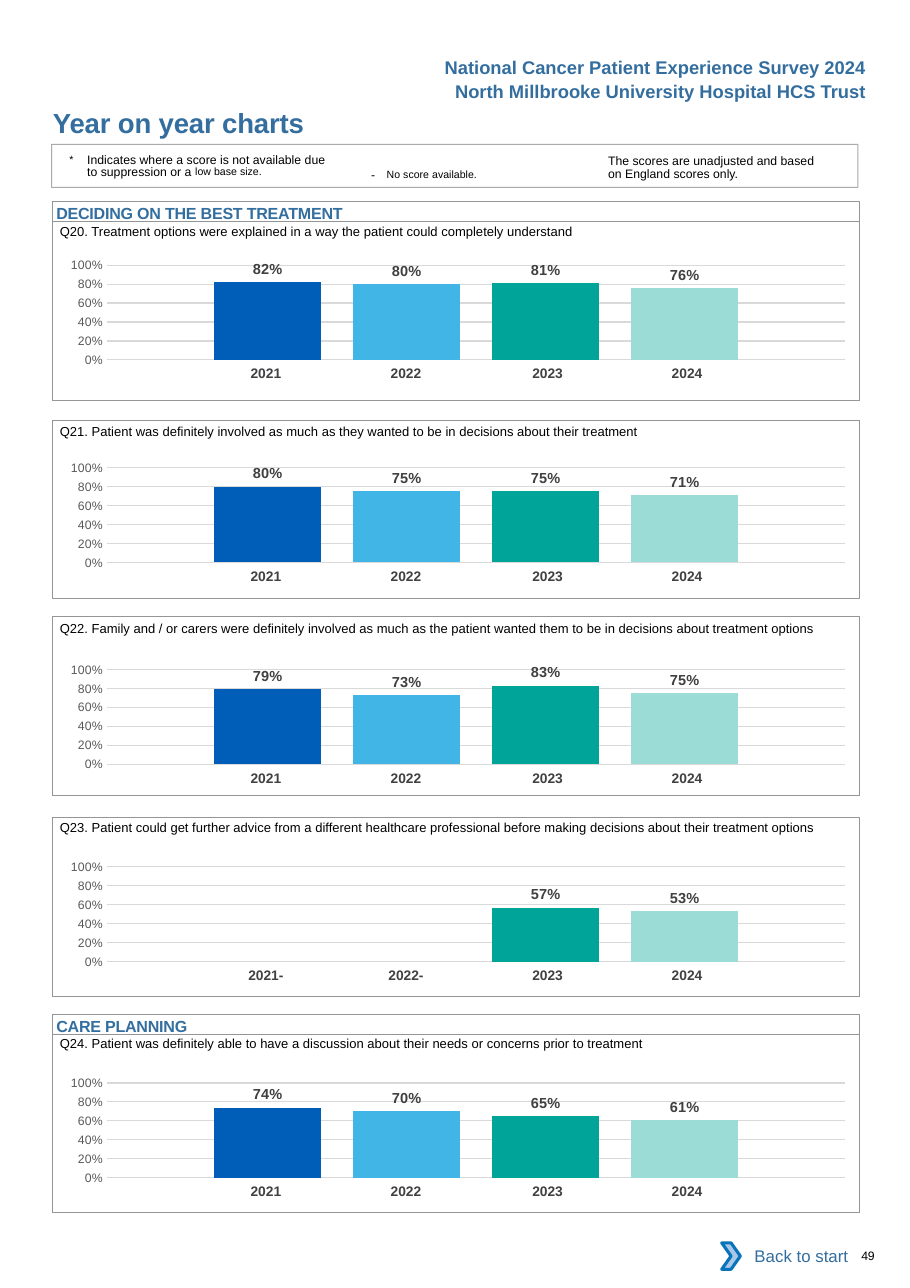
"""Build the year on year survey page with five question panels."""
import dataclasses

import pptx
import pptx.chart.data
import pptx.dml.color
import pptx.enum.chart
import pptx.enum.shapes
import pptx.enum.text
import pptx.oxml
import pptx.oxml.ns
import pptx.util

Cm, Pt = pptx.util.Cm, pptx.util.Pt
rgb = pptx.dml.color.RGBColor.from_string
qn = pptx.oxml.ns.qn
Align = pptx.enum.text.PP_ALIGN
Anchor = pptx.enum.text.MSO_ANCHOR
Shape = pptx.enum.shapes.MSO_SHAPE


@dataclasses.dataclass(frozen=True)
class Theme:
    font: str = "Arial"
    chart_font: str = "Calibri"
    ink: str = "000000"
    accent: str = "336E9F"
    frame: str = "939598"
    year: str = "414042"
    label: str = "404040"
    axis: str = "595959"
    grid: str = "D9D9D9"
    paper: str = "FFFFFF"
    arrow_fill: str = "A8C7E9"
    arrow_line: str = "0A74BB"
    bars: tuple = ("005EB8", "41B6E6", "00A499", "9CDCD7")
    title: float = 18
    header: float = 12
    back: float = 11
    section: float = 10.5
    value: float = 9.5
    years: float = 9
    question: float = 8.5
    small: float = 8
    raised: float = 12
    chart: float = 10


theme = Theme()


def write(frame, text, size=theme.small, color=theme.ink, bold=False, align=Align.LEFT,
          anchor=Anchor.TOP, insets=None, spacing=0, leading=None, hanging=0):
    """Fill a text frame with a string or a list of (text, run attributes)."""
    frame.word_wrap = True
    frame.vertical_anchor = anchor
    if insets:
        frame.margin_left, frame.margin_top, frame.margin_right, frame.margin_bottom = map(Cm, insets)
    paragraph = frame.paragraphs[0]
    paragraph.alignment = align
    if leading:
        paragraph.line_spacing = Pt(leading)
    if hanging:
        properties = paragraph._p.get_or_add_pPr()
        properties.set("marL", str(Cm(hanging)))
        properties.set("indent", str(-Cm(hanging)))
    for words, extra in [(text, {})] if isinstance(text, str) else text:
        if words == "\n":
            paragraph.add_line_break()
            continue
        run = paragraph.add_run()
        run.text = words
        run.font.name, run.font.bold = theme.font, bold
        run.font.size = Pt(extra.get("size", size))
        run.font.color.rgb = rgb(color)
        attributes = run._r.get_or_add_rPr()
        attributes.set("spc", str(round(100 * extra.get("spacing", spacing))))
        if "raise_by" in extra:
            attributes.set("baseline", str(1000 * extra["raise_by"]))


def draw(kind, left, top, width, height, fill=None, line=None, weight=0.5):
    """Add a preset shape with an optional fill and outline."""
    shape = slide.shapes.add_shape(kind, Cm(left), Cm(top), Cm(width), Cm(height))
    shape.shadow.inherit = False
    if fill:
        shape.fill.solid()
        shape.fill.fore_color.rgb = rgb(fill)
    else:
        shape.fill.background()
    if line:
        shape.line.color.rgb = rgb(line)
        shape.line.width = Pt(weight)
    else:
        shape.line.fill.background()
    return shape


deck = pptx.Presentation()
deck.slide_width, deck.slide_height = Cm(20.98), Cm(29.69)
slide = deck.slides.add_slide(deck.slide_layouts[6])

flush = (0, 0, 0, 0)
note_insets = (0, 0.08, 0, 0)
low_base = [
    ("*\t", {"size": theme.raised, "raise_by": 3}),
    ("Indicates where a score is not available due", {}),
    ("\n", {}),
    ("to suppression or a ", {}),
    ("low base size.", {"size": theme.raised, "raise_by": 7}),
]
no_score = [("- ", {"spacing": 2.6}), ("No score available.", {"size": theme.raised, "raise_by": 3})]
unadjusted = [("The scores are unadjusted and based", {}), ("\n", {}), ("on England scores only.", {})]
heading = dict(size=theme.header, color=theme.accent, bold=True, align=Align.RIGHT)
texts = [
    (19.61, 28.78, 1.3, 0.33, "49", dict(insets=(0.25, 0, 0, 0), spacing=-0.2)),
    (1.19, 2.44, 11.43, 0.76, "Year on year charts",
     dict(size=theme.title, color=theme.accent, bold=True, insets=(0.03, 0, 0, 0), spacing=-0.1)),
    (9.55, 1.17, 10.67, 0.76, "National Cancer Patient Experience Survey 2024", heading),
    (9.55, 1.73, 10.67, 0.76, "North Millbrooke University Hospital HCS Trust", heading),
    (1.6, 3.51, 6.91, 0.7, low_base, dict(insets=note_insets, leading=8.1, hanging=0.41)),
    (8.31, 3.58, 4.65, 0.61, no_score, {}),
    (14.02, 3.51, 5.11, 0.69, unadjusted, dict(insets=note_insets, leading=8.1)),
]
for left, top, width, height, words, style in texts:
    box = slide.shapes.add_textbox(Cm(left), Cm(top), Cm(width), Cm(height))
    write(box.text_frame, words, **style)

legend_frame = draw(Shape.RECTANGLE, 1.19, 3.33, 18.59, 0.99, line=theme.frame, weight=0.75)
line_color = legend_frame.line._ln.find(".//" + qn("a:srgbClr"))
line_color.append(pptx.oxml.parse_xml(
    f'<a:alpha {pptx.oxml.ns.nsdecls("a")} val="80000"/>'))

panel_left, panel_width, panel_height = 1.22, 18.59, 4.11
section_height = 0.46
year_widths = (3.23, 3.23, 3.4, 3.23)
year_right_margins = (0, 0, 0.1, 0.3)
panels = [
    (5.11, 5.64, 4.93, "DECIDING ON THE BEST TREATMENT",
     "Q20. Treatment options were explained in a way the patient could completely understand",
     (0.82, 0.8, 0.81, 0.76)),
    (9.68, 10.31, 9.53, None,
     "Q21. Patient was definitely involved as much as they wanted to be in decisions about their treatment",
     (0.8, 0.75, 0.75, 0.71)),
    (14.22, 14.96, 14.07, None,
     "Q22. Family and / or carers were definitely involved as much as the patient wanted them to be in "
     "decisions about treatment options",
     (0.79, 0.73, 0.83, 0.75)),
    (18.85, 19.51, 18.67, None,
     "Q23. Patient could get further advice from a different healthcare professional before making "
     "decisions about their treatment options",
     (None, None, 0.57, 0.53)),
    (23.85, 24.49, 23.65, "CARE PLANNING",
     "Q24. Patient was definitely able to have a discussion about their needs or concerns prior to treatment",
     (0.74, 0.7, 0.65, 0.61)),
]
for panel_top, chart_top, question_top, section, question, scores in panels:
    years_frame = slide.shapes.add_table(1, 4, Cm(4.39), Cm(chart_top + 2.68), Cm(13.09), Cm(0.69))
    years_frame._element.find(".//" + qn("a:tableStyleId")).text = "{2D5ABB26-0587-4C30-8999-92F81FD0307C}"
    years = years_frame.table
    years.first_row = years.horz_banding = False
    for index, score in enumerate(scores):
        years.columns[index].width = Cm(year_widths[index])
        cell = years.cell(0, index)
        cell.fill.background()
        cell.margin_left, cell.margin_right = Cm(0.25), Cm(year_right_margins[index])
        write(cell.text_frame, f"{2021 + index}" + ("-" if score is None else ""),
              size=theme.years, color=theme.year, bold=True, align=Align.CENTER)

    results = pptx.chart.data.CategoryChartData(number_format="0%")
    results.categories = ["1"]
    for index, score in enumerate(scores):
        results.add_series(f"Series {index + 1}", [score])
    chart = slide.shapes.add_chart(pptx.enum.chart.XL_CHART_TYPE.COLUMN_CLUSTERED, Cm(0.99),
                                   Cm(chart_top), Cm(18.59), Cm(3.28), results).chart
    chart.has_legend = chart.has_title = False
    chart.font.name, chart.font.size = theme.chart_font, Pt(theme.chart)
    chart.font.color.rgb = rgb(theme.ink)
    chart.category_axis.visible = False
    axis = chart.value_axis
    axis.minimum_scale, axis.maximum_scale, axis.major_unit = 0, 1, 0.2
    axis.major_tick_mark = axis.minor_tick_mark = pptx.enum.chart.XL_TICK_MARK.NONE
    axis.format.line.fill.background()
    axis.major_gridlines.format.line.color.rgb = rgb(theme.grid)
    axis.major_gridlines.format.line.width = Pt(0.75)
    axis.tick_labels.number_format, axis.tick_labels.number_format_is_linked = "0%", False
    axis.tick_labels.font.name, axis.tick_labels.font.size = theme.font, Pt(theme.small)
    axis.tick_labels.font.color.rgb = rgb(theme.axis)
    plot = chart.plots[0]
    plot.gap_width, plot.overlap, plot.vary_by_categories = 200, -30, False
    for series, color in zip(plot.series, theme.bars):
        series.format.fill.solid()
        series.format.fill.fore_color.rgb = rgb(color)
        labels = series.data_labels
        labels.show_value = True
        labels.position = pptx.enum.chart.XL_LABEL_POSITION.OUTSIDE_END
        labels.number_format, labels.number_format_is_linked = "0%", False
        labels.font.name, labels.font.size, labels.font.bold = theme.font, Pt(theme.value), True
        labels.font.color.rgb = rgb(theme.label)
    plot_area = chart._chartSpace.find(".//" + qn("c:plotArea"))
    for automatic in plot_area.findall(qn("c:layout")):
        plot_area.remove(automatic)
    plot_area.insert(0, pptx.oxml.parse_xml(
        f'<c:layout {pptx.oxml.ns.nsdecls("c")}><c:manualLayout><c:layoutTarget val="inner"/>'
        '<c:xMode val="edge"/><c:yMode val="edge"/><c:x val="0.08"/><c:y val="0.145"/>'
        '<c:w val="0.915"/><c:h val="0.666"/></c:manualLayout></c:layout>'))

    draw(Shape.RECTANGLE, panel_left, panel_top, panel_width, panel_height, line=theme.frame)
    if section:
        banner = draw(Shape.RECTANGLE, panel_left, panel_top - section_height, panel_width,
                      section_height, line=theme.frame)
        write(banner.text_frame, section, size=theme.section, color=theme.accent, bold=True,
              insets=(0.08, 0.03, 0, 0), spacing=-0.1)
    question_box = slide.shapes.add_textbox(Cm(1.38), Cm(question_top), Cm(18.43), Cm(0.61))
    write(question_box.text_frame, question, size=theme.question, insets=(0, 0.23, 0, 0))

back_button = draw(Shape.RECTANGLE, 16.81, 28.42, 3, 1.07, fill=theme.paper)
write(back_button.text_frame, "Back to start", size=theme.back, color=theme.accent,
      align=Align.RIGHT, anchor=Anchor.MIDDLE)
draw(Shape.CHEVRON, 16.64, 28.65, 0.43, 0.61, fill=theme.arrow_fill, line=theme.arrow_line, weight=2)

deck.save("out.pptx")
